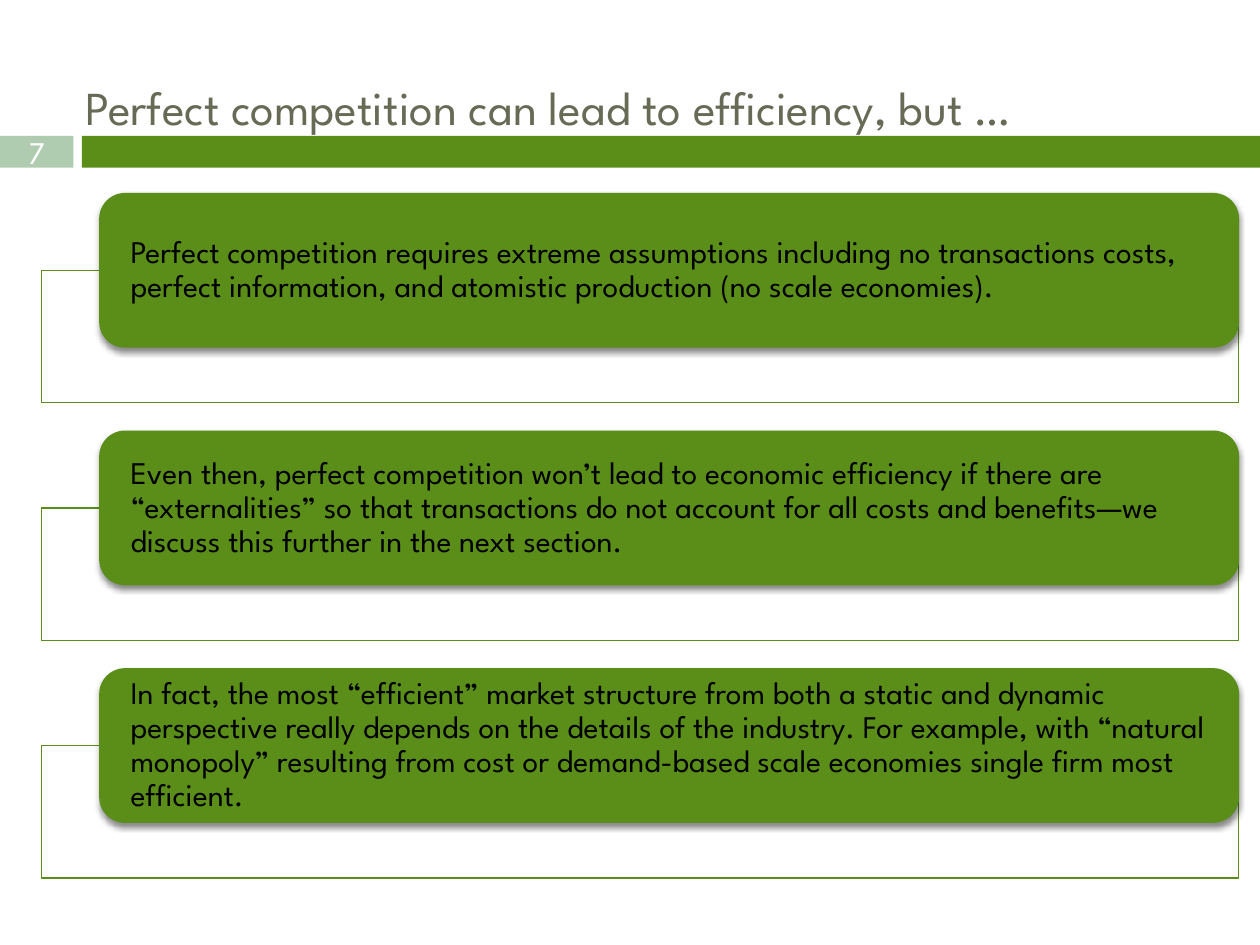
"""Build the slide on the limits of perfect competition."""
from lxml import etree
from pptx import Presentation
from pptx import util as u
from pptx.dml.color import RGBColor
from pptx.enum import shapes, text
from pptx.oxml import ns

GREEN = RGBColor(0x5A, 0x8E, 0x19)
SAGE = RGBColor(0xB0, 0xCC, 0xB0)
OLIVE = RGBColor(0x67, 0x6A, 0x55)
WHITE = RGBColor(0xFF, 0xFF, 0xFF)
BLACK = RGBColor(0, 0, 0)
FONT = "League Spartan"

POINTS = [
    "Perfect competition requires extreme assumptions including no transactions costs, "
    "perfect information, and atomistic production (no scale economies).",
    "Even then, perfect competition won’t lead to economic efficiency if there are "
    "“externalities” so that transactions do not account for all costs and benefits—we "
    "discuss this further in the next section.",
    "In fact, the most “efficient” market structure from both a static and dynamic "
    "perspective really depends on the details of the industry. For example, with “natural "
    "monopoly” resulting from cost or demand-based scale economies single firm most efficient.",
]


def add_block(kind, left, top, width, height, fill):
    block = slide.shapes.add_shape(kind, u.Cm(left), u.Cm(top), u.Cm(width), u.Cm(height))
    block.shadow.inherit = False
    block.fill.solid()
    block.fill.fore_color.rgb = fill
    block.line.fill.background()
    return block


def write(holder, words, size, color, align, inset):
    frame = holder.text_frame
    frame.word_wrap = True
    frame.vertical_anchor = text.MSO_ANCHOR.MIDDLE
    frame.margin_left = frame.margin_right = u.Cm(inset)
    frame.margin_top = frame.margin_bottom = 0
    paragraph = frame.paragraphs[0]
    paragraph.text = words
    paragraph.alignment = align
    paragraph.font.size = u.Pt(size)
    paragraph.font.name = FONT
    paragraph.font.color.rgb = color
    return paragraph


deck = Presentation()
deck.slide_width, deck.slide_height = u.Cm(25.4), u.Cm(19.05)
slide = deck.slides.add_slide(deck.slide_layouts[6])
RECT = shapes.MSO_SHAPE.RECTANGLE
LEFT = text.PP_ALIGN.LEFT

number = add_block(RECT, 0, 2.74, 1.48, 0.64, SAGE)
write(number, "7", 18, WHITE, text.PP_ALIGN.CENTER, 0)
add_block(RECT, 1.65, 2.74, 23.75, 0.64, GREEN)

title = slide.shapes.add_textbox(u.Cm(1.48), u.Cm(1.32), u.Cm(23.9), u.Cm(1.65))
write(title, "Perfect competition can lead to efficiency, but …", 27, OLIVE, LEFT, 0.25)

for row, point in enumerate(POINTS):
    top = 3.89 + row * 4.79
    outline = add_block(RECT, 0.84, top + 1.56, 24.13, 2.67, WHITE)
    outline.line.color.rgb = GREEN
    outline.line.width = u.Pt(0.79)
    white = outline.fill._xPr.find(".//" + ns.qn("a:srgbClr"))
    etree.SubElement(white, ns.qn("a:alpha"), val="90000")

    card = add_block(shapes.MSO_SHAPE.ROUNDED_RECTANGLE, 2, top, 22.98, 3.12, GREEN)
    effects = card._element.spPr.find(ns.qn("a:effectLst"))
    shadow = etree.SubElement(
        effects, ns.qn("a:outerShdw"), blurRad=str(u.Pt(3)), dist=str(u.Pt(2.4)),
        dir="5400000", rotWithShape="0")
    shade = etree.SubElement(shadow, ns.qn("a:srgbClr"), val=str(BLACK))
    etree.SubElement(shade, ns.qn("a:alpha"), val="45000")
    write(card, point, 18, BLACK, LEFT, 0.48).line_spacing = 0.9

deck.save("out.pptx")
